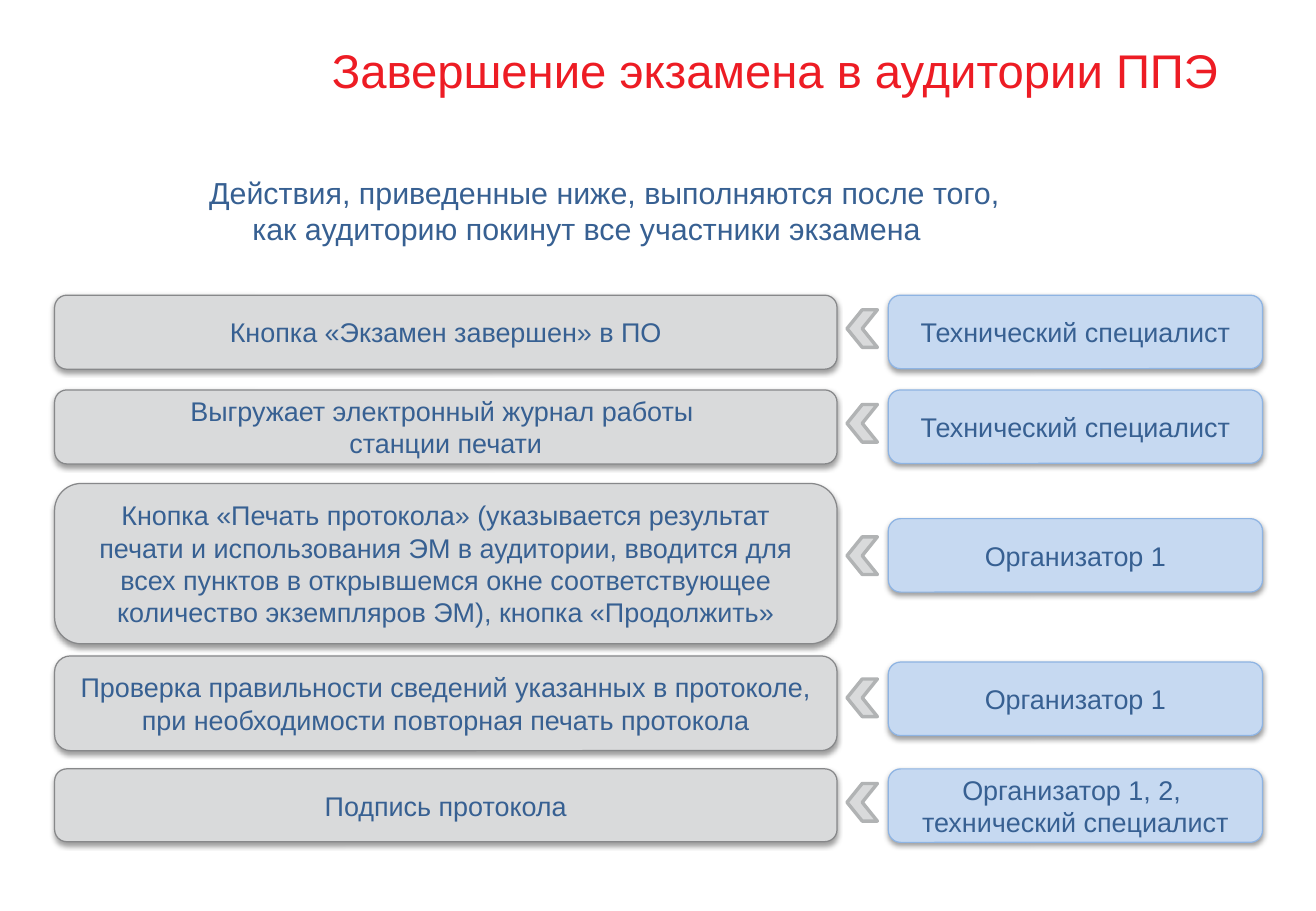
from pptx import Presentation
from pptx import util as u
from pptx.dml.color import RGBColor
from pptx.enum import shapes, text
from pptx.oxml import parse_xml
from pptx.oxml.ns import nsdecls, qn

COLORS = {
    "title": "ED1C24",
    "text": "376092",
    "step": "D9DADB",
    "step_line": "87888A",
    "role": "C6D9F1",
    "role_line": "8EB4E3",
    "arrow_line": "B1B3B4",
    "shadow": "000000",
}

STEPS = [
    ("Кнопка «Экзамен завершен» в ПО", 32.4, 8.13,
     "Технический специалист", 32.4, 34),
    ("Выгружает электронный журнал работы \nстанции печати", 42.8, 8.13,
     "Технический специалист", 42.8, 44.4),
    ("Кнопка «Печать протокола» (указывается результат печати и использования ЭМ "
     "в аудитории, вводится для всех пунктов в открывшемся окне соответствующее "
     "количество экземпляров ЭМ), кнопка «Продолжить»", 53.07, 17.6,
     "Организатор 1", 56.93, 58.93),
    ("Проверка правильности сведений указанных в протоколе, при необходимости "
     "повторная печать протокола", 72, 10.4,
     "Организатор 1", 72.67, 74.53),
    ("Подпись протокола", 84.4, 8,
     "Организатор 1, 2, \vтехнический специалист", 84.4, 86),
]


class ExamSlide:
    font = "Arial"

    def __init__(self, deck):
        self.width, self.height = deck.slide_width, deck.slide_height
        self.page = deck.slides.add_slide(deck.slide_layouts[5])

    def area(self, left, top, width, height):
        return (int(self.width * left / 100), int(self.height * top / 100),
                int(self.width * width / 100), int(self.height * height / 100))

    def color(self, name):
        return RGBColor.from_string(COLORS[name])

    def fill_text(self, box, words, size, color, anchor=text.MSO_ANCHOR.MIDDLE):
        frame = box.text_frame
        frame.word_wrap = True
        frame.auto_size = text.MSO_AUTO_SIZE.NONE
        frame.vertical_anchor = anchor
        frame.margin_left = frame.margin_right = u.Inches(0.12)
        frame.margin_top = frame.margin_bottom = u.Inches(0.06)
        frame.text = words
        for para in frame.paragraphs:
            para.alignment = text.PP_ALIGN.CENTER
            para.font.name = self.font
            para.font.size = u.Pt(size)
            para.font.color.rgb = self.color(color)

    def title(self, words, *area):
        box = self.page.shapes.title
        box.left, box.top, box.width, box.height = self.area(*area)
        self.fill_text(box, words, 28, "title")

    def note(self, words, *area):
        box = self.page.shapes.add_textbox(*self.area(*area))
        self.fill_text(box, words, 18, "text", text.MSO_ANCHOR.TOP)
        props = box.text_frame.paragraphs[0]._p.get_or_add_pPr()
        props.set("marL", str(u.Inches(0.05)))
        props.set("indent", str(u.Inches(0.36)))

    def shape(self, kind, fill, line, weight, *area):
        box = self.page.shapes.add_shape(kind, *self.area(*area))
        box.shadow.inherit = False
        box.fill.solid()
        box.fill.fore_color.rgb = self.color(fill)
        box.line.color.rgb = self.color(line)
        box.line.width = u.Pt(weight)
        return box

    def card(self, words, style, *area):
        box = self.shape(shapes.MSO_SHAPE.ROUNDED_RECTANGLE, style, style + "_line", 0.75, *area)
        box._element.spPr.find(qn("a:effectLst")).append(parse_xml(
            f'<a:outerShdw {nsdecls("a")} blurRad="{u.Pt(3.1)}" dist="{u.Pt(1.6)}" '
            f'dir="5400000" rotWithShape="0"><a:srgbClr val="{COLORS["shadow"]}">'
            '<a:alpha val="38000"/></a:srgbClr></a:outerShdw>'))
        self.fill_text(box, words, 16, "text")

    def arrow(self, *area):
        self.shape(shapes.MSO_SHAPE.CHEVRON, "step", "arrow_line", 2, *area).rotation = 180


def main():
    deck = Presentation()
    deck.slide_width, deck.slide_height = u.Inches(10.83), u.Inches(7.5)
    slide = ExamSlide(deck)
    slide.title("Завершение экзамена в аудитории ППЭ ", 18.74, 1.2, 81.26, 12.93)
    slide.note("Действия, приведенные ниже, выполняются после того, \v"
               "как аудиторию покинут все участники экзамена", 4.15, 18.27, 80.42, 10.13)
    for step, step_top, step_height, role, role_top, arrow_top in STEPS:
        slide.card(step, "step", 4.15, step_top, 59.46, step_height)
        slide.card(role, "role", 67.5, role_top, 28.44, 8.07)
        slide.arrow(64.36, arrow_top, 2.31, 4.13)
    deck.save("out.pptx")


if __name__ == "__main__":
    main()
